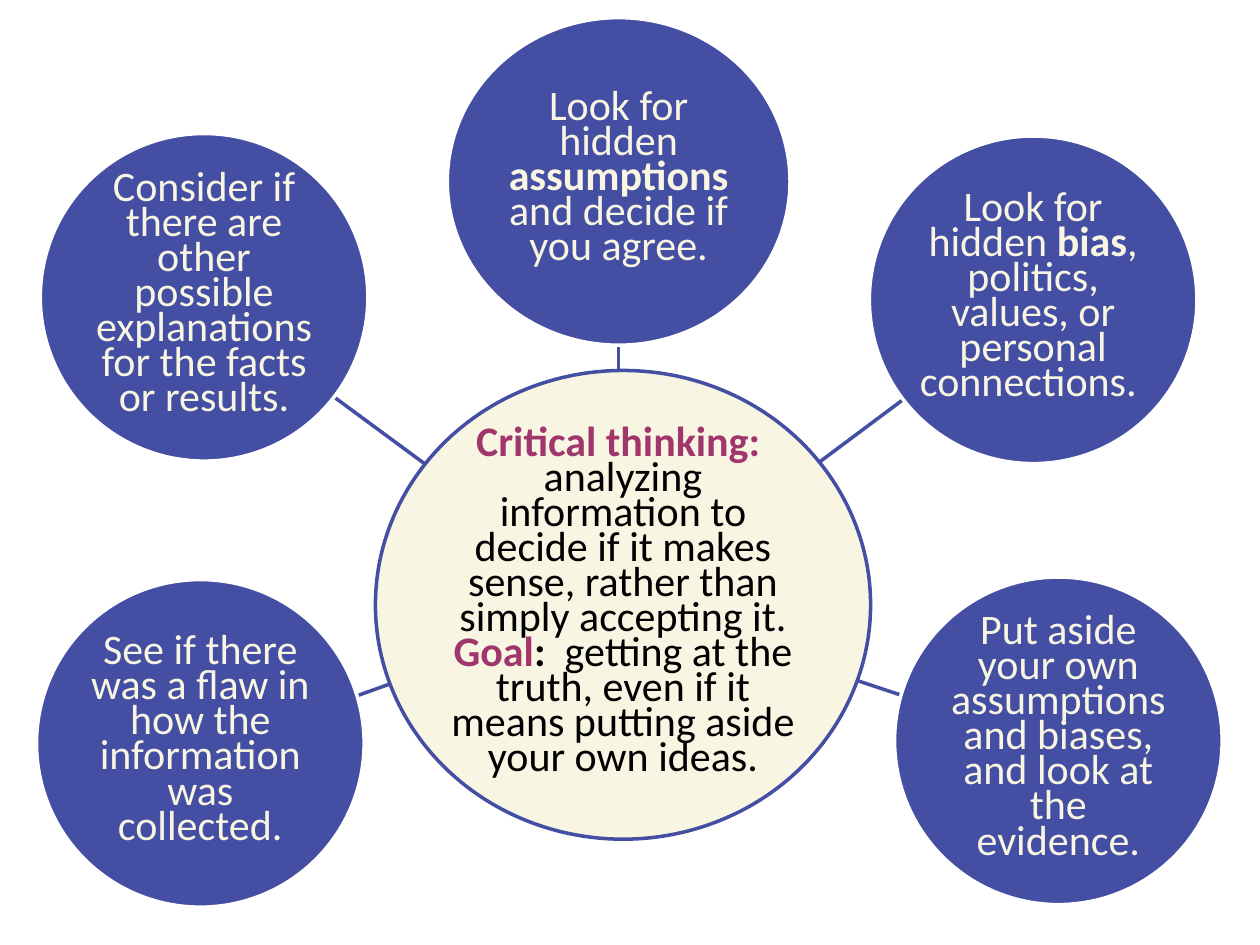
from lxml.etree import SubElement
from pptx import Presentation
from pptx.dml.color import RGBColor
from pptx.enum.shapes import MSO_CONNECTOR, MSO_SHAPE
from pptx.enum.text import MSO_ANCHOR, PP_ALIGN
from pptx.oxml.ns import qn
from pptx.util import Inches, Pt

INDIGO = RGBColor(0x44, 0x4E, 0xA2)
CREAM = RGBColor(0xF8, 0xF6, 0xE3)
PLUM = RGBColor(0xA0, 0x36, 0x6C)
BLACK = RGBColor(0, 0, 0)
WHITE = RGBColor(0xFF, 0xFF, 0xFF)

deck = Presentation()
deck.slide_width, deck.slide_height = Inches(10), Inches(7.5)
page = deck.slides.add_slide(deck.slide_layouts[6])


def add_bubble(left, top, width, height, fill, outline, spans):
    """Draw an oval holding one paragraph; spans are (text, bold, colour)."""
    bubble = page.shapes.add_shape(
        MSO_SHAPE.OVAL, Inches(left), Inches(top), Inches(width), Inches(height))
    bubble.shadow.inherit = False
    bubble.fill.solid()
    bubble.fill.fore_color.rgb = fill
    bubble.line.color.rgb = outline
    bubble.line.width = Pt(2)

    frame = bubble.text_frame
    frame.word_wrap = True
    frame.vertical_anchor = MSO_ANCHOR.MIDDLE
    frame.margin_left = frame.margin_right = Inches(0.02)
    frame.margin_top = frame.margin_bottom = Inches(0.02)
    para = frame.paragraphs[0]
    para.alignment = PP_ALIGN.CENTER
    para.line_spacing = Pt(20)
    para.font.name = "Calibri"
    para.font.size = Pt(24)
    for text, bold, colour in spans:
        span = para.add_run()
        span.text = text
        span.font.bold = bold
        span.font.color.rgb = colour


add_bubble(2.98, 2.94, 3.93, 3.72, CREAM, INDIGO, [
    ("Critical thinking:  ", True, PLUM),
    ("analyzing information to decide if it makes sense, "
     "rather than simply accepting it. ", False, BLACK),
    ("Goal", True, PLUM),
    (": ", True, BLACK),
    (" getting at the truth, even if it means putting aside your own ideas.",
     False, BLACK),
])

# Each strategy: left, top, width, spoke from the hub (x1, y1, x2, y2), (text, bold) spans
strategies = [
    (3.55, 0.14, 2.72, (4.91, 2.94, 4.91, 2.74),
     [("Look for hidden ", False), ("assumptions", True),
      (" and decide if you agree.", False)]),
    (6.9, 1.08, 2.6, (6.5, 3.67, 7.17, 3.17),
     [("Look for hidden ", False), ("bias", True),
      (", politics, values, or personal connections. ", False)]),
    (7.1, 4.58, 2.6, (6.8, 5.4, 7.16, 5.52),
     [("Put aside your own assumptions and biases, "
       "and look at the evidence.", False)]),
    (0.29, 4.6, 2.6, (3.09, 5.43, 2.84, 5.52),
     [("See if there was a flaw in how the information was collected.", False)]),
    (0.32, 1.06, 2.6, (3.37, 3.68, 2.65, 3.15),
     [("Consider if there are other possible explanations "
       "for the facts or results.", False)]),
]

for left, top, width, spoke_ends, spans in strategies:
    spoke = page.shapes.add_connector(
        MSO_CONNECTOR.STRAIGHT, *[Inches(value) for value in spoke_ends])
    spoke.line.color.rgb = INDIGO
    spoke.line.width = Pt(2)
    SubElement(spoke._element.spPr, qn("a:effectLst"))
    add_bubble(left, top, width, 2.6, INDIGO, WHITE,
               [(text, bold, CREAM) for text, bold in spans])

deck.save("out.pptx")
